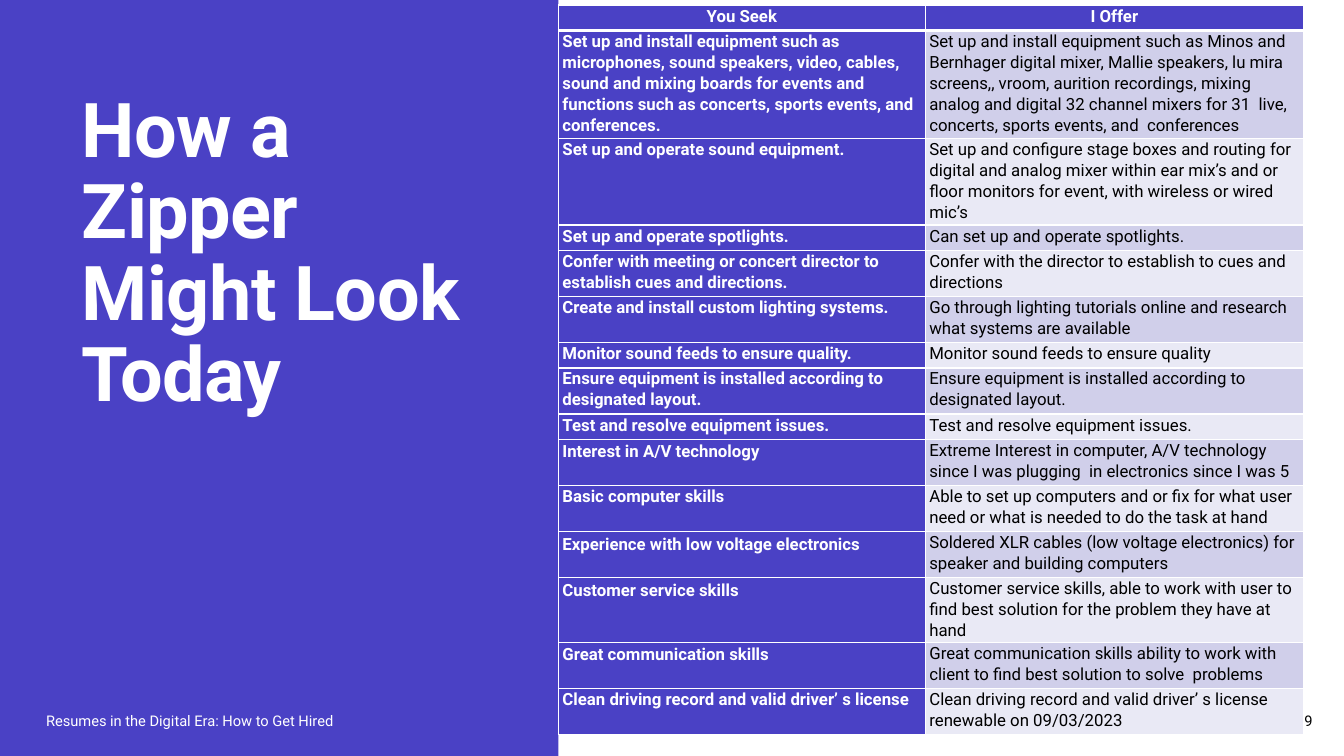
"""Build a slide that pairs an employer's needs with an applicant's offers."""
from dataclasses import dataclass

from lxml import etree
from pptx import Presentation
from pptx.dml.color import RGBColor
from pptx.enum.shapes import MSO_SHAPE
from pptx.enum.text import MSO_ANCHOR, MSO_AUTO_SIZE, PP_ALIGN
from pptx.oxml.ns import qn
from pptx.slide import Slide
from pptx.table import _Cell
from pptx.text.text import _Paragraph
from pptx.util import Emu, Inches, Pt

RECTANGLE = MSO_SHAPE.RECTANGLE
TOP, MIDDLE = MSO_ANCHOR.TOP, MSO_ANCHOR.MIDDLE
LEFT, CENTER, RIGHT = PP_ALIGN.LEFT, PP_ALIGN.CENTER, PP_ALIGN.RIGHT
NO_FIT = MSO_AUTO_SIZE.NONE
WIDTH, HEIGHT = Inches(13.33), Inches(7.5)
TITLE_ONLY = 5


@dataclass(frozen=True)
class Theme:
    """Colours, font and type sizes of the slide."""
    font: str = "Roboto"
    violet: str = "4A41C5"
    white: str = "FFFFFF"
    black: str = "000000"
    bands: tuple[str, str] = ("D0CFEA", "E9E9F5")
    title_size: float = 54
    table_size: float = 12
    footer_size: float = 10.5
    rule: float = 1
    header_rule: float = 3


@dataclass(frozen=True)
class Area:
    """A box on a grid of 100 columns by 100 rows."""
    left: float
    top: float
    width: float
    height: float

    def box(self) -> tuple[Emu, Emu, Emu, Emu]:
        """Return left, top, width and height as lengths."""
        return columns(self.left), rows(self.top), columns(self.width), rows(self.height)


@dataclass(frozen=True)
class Match:
    """A need, the offer that meets it, and the text lines reserved for them."""
    seek: str
    offer: str
    lines: int = 2
    seek_spacing: float = 1.07


@dataclass(frozen=True)
class FooterText:
    """One text in the footer."""
    text: str
    area: Area
    color: str
    align: PP_ALIGN


THEME = Theme()
PANEL = Area(0, 0, 41.55, 100)
TITLE = Area(5.33, 11.47, 32.92, 51.47)
TABLE = Area(41.55, 0.67, 55.43, 92)
COLUMN_WIDTHS = (27.3, 28.13)
LINE_ROWS, ROW_PADDING = 2.75, 0.6
SPACING = 1.07
FOOTERS = (
    FooterText("Resumes in the Digital Era: How to Get Hired",
               Area(2.7, 92.67, 37.8, 5.33), THEME.white, LEFT),
    FooterText("9", Area(93.23, 92.67, 5.17, 5.33), THEME.black, RIGHT),
)
HEADINGS = Match("You Seek", "I Offer", 1)
MATCHES = (
    Match("Set up and install equipment such as microphones, sound speakers, video, cables, "
          "sound and mixing boards for events and functions such as concerts, sports events, "
          "and  conferences.",
          "Set up and install equipment such as Minos and Bernhager digital mixer, Mallie "
          "speakers, lu mira screens,, vroom, aurition recordings, mixing analog and digital 32 "
          "channel mixers for 31  live, concerts, sports events, and  conferences", 5),
    Match("Set up and operate sound equipment.",
          "Set up and configure stage boxes and routing for digital and analog mixer within "
          "ear mix’s and or floor monitors for event, with wireless or wired mic’s", 3),
    Match("Set up and operate spotlights.", "Can set up and operate spotlights.", 1),
    Match("Confer with meeting or concert director to establish cues and directions.",
          "Confer with the director to establish to cues and directions"),
    Match("Create and install custom lighting systems.",
          "Go through lighting tutorials online and research what systems are available"),
    Match("Monitor sound feeds to ensure quality.", "Monitor sound feeds to ensure quality", 1),
    Match("Ensure equipment is installed according to designated layout.",
          "Ensure equipment is installed according to designated layout."),
    Match("Test and resolve equipment issues.", "Test and resolve equipment issues.", 1),
    Match("Interest in A/V technology",
          "Extreme Interest in computer, A/V technology since I was plugging  in electronics "
          "since I was 5", seek_spacing=1.15),
    Match("Basic computer skills",
          "Able to set up computers and or fix for what user need or what is needed to do the "
          "task at hand"),
    Match("Experience with low voltage electronics",
          "Soldered XLR cables (low voltage electronics) for speaker and building computers",
          seek_spacing=1.15),
    Match("Customer service skills",
          "Customer service skills, able to work with user to find best solution for the "
          "problem they have at hand", seek_spacing=1.15),
    Match("Great communication skills",
          "Great communication skills ability to work with client to find best solution to "
          "solve  problems", seek_spacing=1.15),
    Match("Clean driving record and valid driver’ s license",
          "Clean driving record and valid driver’ s license renewable on 09/03/2023"),
)


def columns(count: float) -> Emu:
    """Convert grid columns to a length."""
    return Emu(round(WIDTH * count / 100))


def rows(count: float) -> Emu:
    """Convert grid rows to a length."""
    return Emu(round(HEIGHT * count / 100))


def add_text(paragraph: _Paragraph, text: str, size: float, color: str,
             bold: bool = False, tracking: int = 0) -> None:
    """Add one formatted run; tracking is in hundredths of a point."""
    run = paragraph.add_run()
    run.text = text
    run.font.name = THEME.font
    run.font.size = Pt(size)
    run.font.bold = bold
    run.font.color.rgb = RGBColor.from_string(color)
    if tracking:
        run.font._element.set("spc", str(tracking))


def draw_panel(slide: Slide) -> None:
    """Draw the violet panel behind the title."""
    panel = slide.shapes.add_shape(RECTANGLE, *PANEL.box())
    panel.shadow.inherit = False
    panel.fill.solid()
    panel.fill.fore_color.rgb = RGBColor.from_string(THEME.violet)
    panel.line.fill.background()
    slide.shapes.title._element.addprevious(panel._element)


def draw_title(slide: Slide) -> None:
    """Place and format the title placeholder."""
    title = slide.shapes.title
    title.left, title.top, title.width, title.height = TITLE.box()
    frame = title.text_frame
    frame.word_wrap, frame.auto_size, frame.vertical_anchor = True, NO_FIT, TOP
    paragraph = frame.paragraphs[0]
    paragraph.alignment, paragraph.line_spacing = LEFT, 0.9
    add_text(paragraph, "How a Zipper Might Look Today", THEME.title_size, THEME.white, True, -40)


def draw_footer(slide: Slide, footer: FooterText) -> None:
    """Draw one footer text."""
    frame = slide.shapes.add_textbox(*footer.area.box()).text_frame
    frame.word_wrap, frame.vertical_anchor = True, MIDDLE
    paragraph = frame.paragraphs[0]
    paragraph.alignment, paragraph.space_after = footer.align, Pt(6)
    add_text(paragraph, footer.text, THEME.footer_size, footer.color)


def style_cell(cell: _Cell, fill: str, top_rule: float, bottom_rule: float) -> None:
    """Set the margins, fill and borders of a cell."""
    cell.margin_left = cell.margin_right = Inches(0.04)
    cell.margin_top = cell.margin_bottom = 0
    cell.fill.solid()
    cell.fill.fore_color.rgb = RGBColor.from_string(fill)
    properties = cell._tc.get_or_add_tcPr()
    borders = (("a:lnL", THEME.rule), ("a:lnR", THEME.rule),
               ("a:lnT", top_rule), ("a:lnB", bottom_rule))
    for position, (side, weight) in enumerate(borders):
        border = etree.Element(qn(side), w=str(Pt(weight)))
        solid = etree.SubElement(border, qn("a:solidFill"))
        etree.SubElement(solid, qn("a:srgbClr"), val=THEME.white)
        properties.insert(position, border)


def draw_table(slide: Slide) -> None:
    """Draw the table of needs and offers."""
    entries = (HEADINGS, *MATCHES)
    table = slide.shapes.add_table(len(entries), len(COLUMN_WIDTHS), *TABLE.box()).table
    for column, width in zip(table.columns, COLUMN_WIDTHS):
        column.width = columns(width)
    for index, entry in enumerate(entries):
        table.rows[index].height = rows(ROW_PADDING + LINE_ROWS * entry.lines)
        header = index == 0
        top_rule = THEME.header_rule if index == 1 else THEME.rule
        bottom_rule = THEME.header_rule if header else THEME.rule
        texts = ((entry.seek, entry.seek_spacing), (entry.offer, SPACING))
        for side, (text, spacing) in enumerate(texts):
            strong = header or side == 0
            cell = table.cell(index, side)
            fill = THEME.violet if strong else THEME.bands[(index - 1) % 2]
            style_cell(cell, fill, top_rule, bottom_rule)
            paragraph = cell.text_frame.paragraphs[0]
            paragraph.alignment, paragraph.line_spacing = CENTER if header else LEFT, spacing
            add_text(paragraph, text, THEME.table_size,
                     THEME.white if strong else THEME.black, strong)


def main() -> None:
    """Build and save the slide."""
    deck = Presentation()
    deck.slide_width, deck.slide_height = WIDTH, HEIGHT
    slide = deck.slides.add_slide(deck.slide_layouts[TITLE_ONLY])
    draw_panel(slide)
    draw_title(slide)
    for footer in FOOTERS:
        draw_footer(slide, footer)
    draw_table(slide)
    deck.save("out.pptx")


if __name__ == "__main__":
    main()
